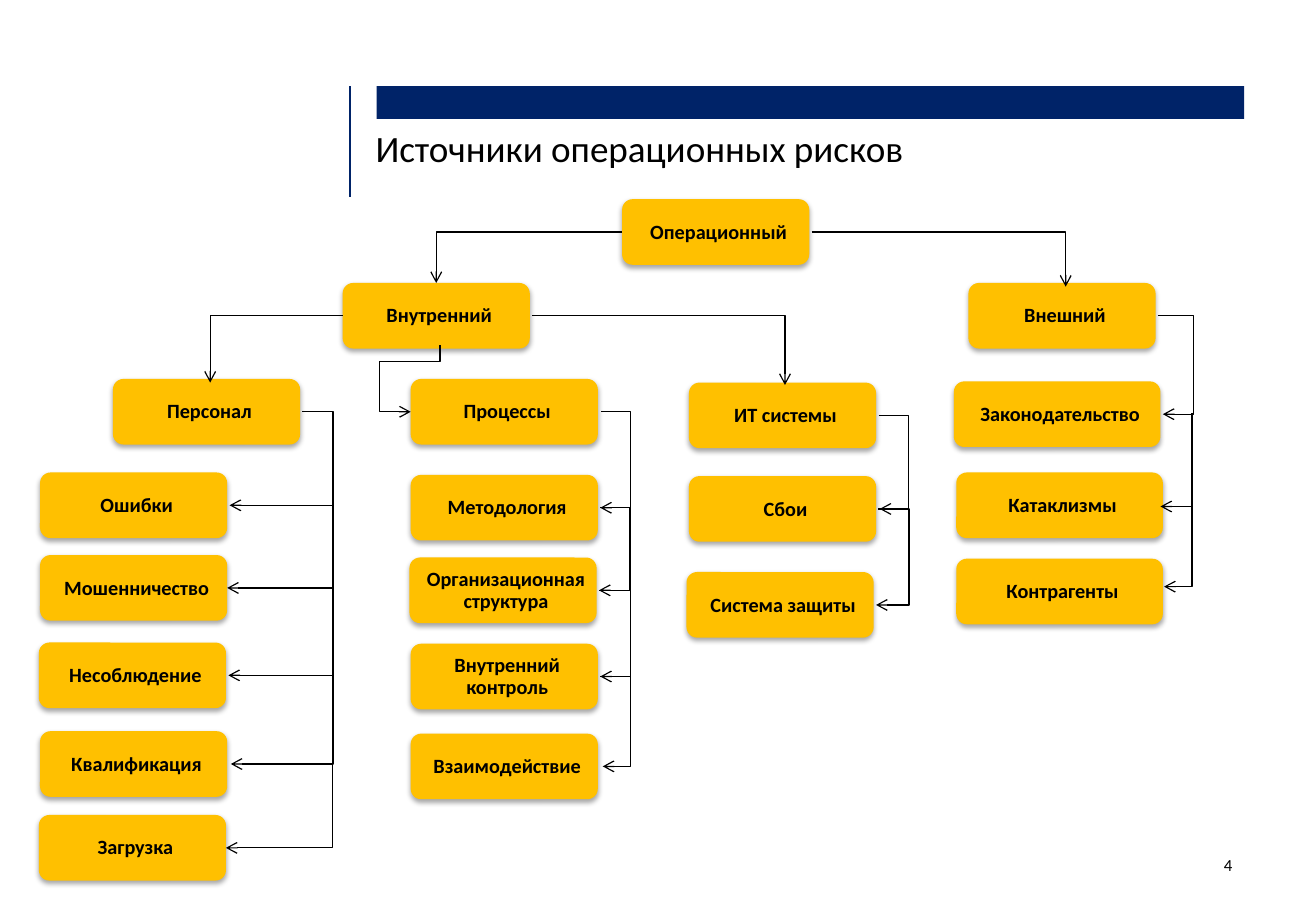
"""Build the slide with the tree of operational risk sources."""
from dataclasses import dataclass
from typing import Optional

from pptx import Presentation
from pptx.dml.color import RGBColor
from pptx.enum.shapes import MSO_CONNECTOR as ConnectorType, MSO_SHAPE as ShapeType
from pptx.enum.text import MSO_ANCHOR as Anchor, MSO_AUTO_SIZE as AutoSize, PP_ALIGN as Align
from pptx.oxml import parse_xml
from pptx.oxml.ns import nsdecls, qn
from pptx.oxml.xmlchemy import OxmlElement
from pptx.shapes.connector import Connector
from pptx.slide import Slide
from pptx.text.text import TextFrame
from pptx.util import Inches, Pt

FONT = "Calibri"
NAVY, AMBER, BLACK = "002368", "FFC000", "000000"
BOX_HEIGHT = 0.54

Point = tuple[float, float]


@dataclass(frozen=True)
class RiskBox:
    label: str
    left: float
    top: float
    width: float = 1.54


@dataclass(frozen=True)
class Corner:
    start: Point
    end: Point
    turned: bool = False


@dataclass(frozen=True)
class Loop:
    start: Point
    end: Point
    bend: float


RISK_BOXES = [
    RiskBox("Внешний", 7.97, 2.33),
    RiskBox("Внутренний", 2.82, 2.33),
    RiskBox("Операционный", 5.12, 1.64),
    RiskBox("ИТ системы", 5.67, 3.15),
    RiskBox("Процессы", 3.38, 3.12),
    RiskBox("Персонал", 0.93, 3.12),
    RiskBox("Ошибки", 0.33, 3.89),
    RiskBox("Мошенничество", 0.33, 4.57),
    RiskBox("Несоблюдение", 0.32, 5.29),
    RiskBox("Квалификация", 0.33, 6.02),
    RiskBox("Загрузка", 0.32, 6.71),
    RiskBox("Методология", 3.38, 3.91),
    RiskBox("Организационная структура", 3.37, 4.59),
    RiskBox("Внутренний контроль", 3.38, 5.3),
    RiskBox("Взаимодействие", 3.38, 6.04),
    RiskBox("Сбои", 5.67, 3.92),
    RiskBox("Система защиты", 5.65, 4.71),
    RiskBox("Законодательство", 7.85, 3.14, 1.7),
    RiskBox("Катаклизмы", 7.87, 3.89, 1.7),
    RiskBox("Контрагенты", 7.87, 4.6, 1.7),
]

STAFF_TARGETS = [(1.89, 4.16), (1.87, 4.84), (1.88, 5.56), (1.9, 6.29), (1.86, 6.98)]

CORNERS = [
    Corner((6.68, 1.91), (8.77, 2.36)),
    Corner((5.12, 1.91), (3.59, 2.33)),
    Corner((2.82, 2.6), (1.73, 3.15)),
    Corner((4.38, 2.6), (6.46, 3.17)),
    Corner((9.81, 3.4), (9.55, 4.17), turned=True),
    Corner((9.81, 4.12), (9.58, 4.83), turned=True),
]

LOOPS = [Loop((2.49, 3.39), target, 2.74) for target in STAFF_TARGETS] + [
    Loop((9.53, 2.6), (9.57, 3.41), 9.82),
    Loop((4.95, 3.39), (4.94, 4.18), 5.19),
    Loop((4.94, 4.18), (4.93, 4.86), 5.19),
    Loop((4.93, 4.86), (4.94, 5.57), 5.19),
    Loop((4.94, 5.57), (4.96, 6.31), 5.19),
    Loop((7.23, 3.42), (7.24, 4.19), 7.48),
    Loop((7.23, 4.19), (7.21, 4.98), 7.48),
]


def color(value: str) -> RGBColor:
    return RGBColor.from_string(value)


def write(frame: TextFrame, text: str, size: float, align: Align, bold: bool = False) -> None:
    frame.word_wrap = True
    frame.auto_size = AutoSize.NONE
    paragraph = frame.paragraphs[0]
    paragraph.alignment = align
    run = paragraph.add_run()
    run.text = text
    run.font.name = FONT
    run.font.size = Pt(size)
    run.font.bold = bold
    run.font.color.rgb = color(BLACK)


def set_margins(frame: TextFrame, left: float, top: float, right: float, bottom: float) -> None:
    frame.margin_left, frame.margin_top = Inches(left), Inches(top)
    frame.margin_right, frame.margin_bottom = Inches(right), Inches(bottom)


def draw_header(slide: Slide) -> None:
    bar = slide.shapes.add_shape(
        ShapeType.RECTANGLE, Inches(3.1), Inches(0.71), Inches(7.14), Inches(0.27))
    bar.shadow.inherit = False
    bar.fill.solid()
    bar.fill.fore_color.rgb = color(NAVY)
    bar.line.fill.background()
    draw_line(slide, ConnectorType.STRAIGHT, (2.88, 0.71), (2.88, 1.62), NAVY)

    title = slide.shapes.title
    title.left, title.top = Inches(3.09), Inches(1.03)
    title.width, title.height = Inches(4.5), Inches(0.39)
    set_margins(title.text_frame, 0, 0, 0, 0)
    title.text_frame.vertical_anchor = Anchor.TOP
    write(title.text_frame, "Источники операционных рисков", 22, Align.LEFT)


def draw_page_number(slide: Slide) -> None:
    number = slide.shapes.add_textbox(Inches(9.45), Inches(6.99), Inches(0.79), Inches(0.5))
    write(number.text_frame, "4", 10, Align.RIGHT)


def draw_box(slide: Slide, box: RiskBox) -> None:
    shape = slide.shapes.add_shape(
        ShapeType.ROUNDED_RECTANGLE, Inches(box.left), Inches(box.top),
        Inches(box.width), Inches(BOX_HEIGHT))
    shape.adjustments[0] = 0.16
    shape.fill.solid()
    shape.fill.fore_color.rgb = color(AMBER)
    shape.line.fill.background()
    shape._element.spPr.append(parse_xml(
        f'<a:effectLst {nsdecls("a")}><a:outerShdw blurRad="{Pt(3.1)}" dist="{Pt(1.8)}" '
        f'dir="5400000" rotWithShape="0"><a:srgbClr val="{BLACK}"><a:alpha val="35000"/>'
        '</a:srgbClr></a:outerShdw></a:effectLst>'))
    frame = shape.text_frame
    set_margins(frame, 0.09, 0.09, 0.04, 0.08)
    frame.vertical_anchor = Anchor.MIDDLE
    write(frame, box.label, 12, Align.CENTER, bold=True)
    frame.paragraphs[0].line_spacing = 0.9


def draw_line(slide: Slide, kind: ConnectorType, start: Point, end: Point, ink: str) -> Connector:
    connector = slide.shapes.add_connector(kind, *(Inches(value) for value in (*start, *end)))
    connector.line.color.rgb = color(ink)
    connector.line.width = Pt(0.75)
    connector._element.spPr.append(OxmlElement("a:effectLst"))
    return connector


def draw_elbow(slide: Slide, start: Point, end: Point, preset: str,
               bends: Optional[list[float]] = None, turned: bool = False) -> None:
    if turned:
        center_x, center_y = (start[0] + end[0]) / 2, (start[1] + end[1]) / 2
        half_width, half_height = (end[1] - start[1]) / 2, (start[0] - end[0]) / 2
        start = (center_x - half_width, center_y - half_height)
        end = (center_x + half_width, center_y + half_height)
    connector = draw_line(slide, ConnectorType.ELBOW, start, end, BLACK)
    properties = connector._element.spPr
    if turned:
        properties.find(qn("a:xfrm")).set("rot", "5400000")
    geometry = properties.find(qn("a:prstGeom"))
    geometry.set("prst", preset)
    for index, bend in enumerate(bends or [], start=1):
        guide = OxmlElement("a:gd")
        guide.set("name", f"adj{index}")
        guide.set("fmla", f"val {round(bend * 100000)}")
        geometry.find(qn("a:avLst")).append(guide)
    arrow = OxmlElement("a:tailEnd")
    arrow.set("type", "arrow")
    properties.find(qn("a:ln")).append(arrow)


def main() -> None:
    presentation = Presentation()
    presentation.slide_width, presentation.slide_height = Inches(10.83), Inches(7.5)
    slide = presentation.slides.add_slide(presentation.slide_layouts[5])
    draw_header(slide)
    draw_page_number(slide)
    for box in RISK_BOXES:
        draw_box(slide, box)
    for corner in CORNERS:
        draw_elbow(slide, corner.start, corner.end, "bentConnector2", turned=corner.turned)
    for loop in LOOPS:
        bend = (loop.bend - loop.start[0]) / (loop.end[0] - loop.start[0])
        draw_elbow(slide, loop.start, loop.end, "bentConnector3", [bend])
    draw_elbow(slide, (3.62, 2.84), (3.38, 3.39), "bentConnector4", [0.25, 2.08], turned=True)
    presentation.save("out.pptx")


if __name__ == "__main__":
    main()
